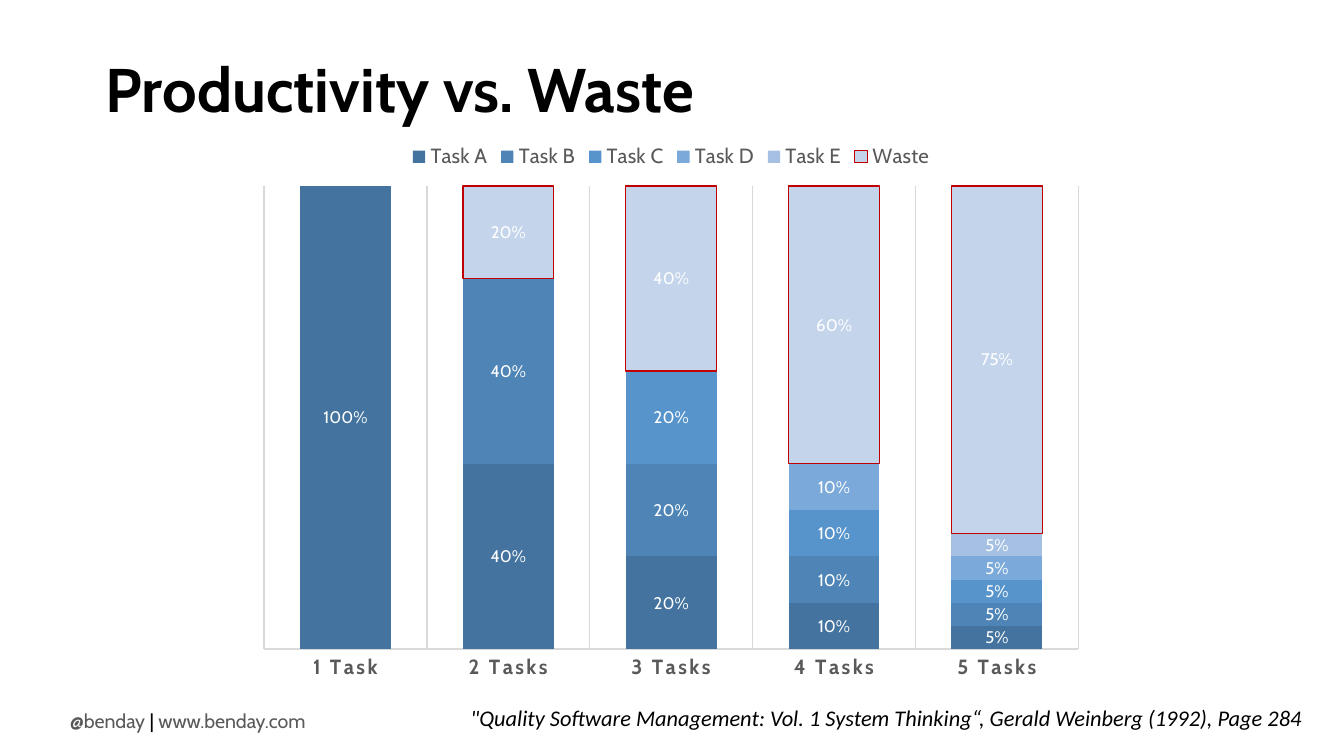
from pptx import Presentation
from pptx.chart.data import CategoryChartData as Data
from pptx.dml.color import RGBColor
from pptx.enum.chart import XL_CHART_TYPE as Kind, XL_LABEL_POSITION as Spot
from pptx.enum.chart import XL_LEGEND_POSITION as Side, XL_TICK_MARK as Tick
from pptx.enum.text import MSO_ANCHOR as Anchor, MSO_AUTO_SIZE as Fit
from pptx.util import Cm, Pt

GREY = "595959"
RULE = "D9D9D9"
TASKS = [
    ("Task A", "43739E", (1, 0.4, 0.2, 0.1, 0.05)),
    ("Task B", "4E85B6", (0, 0.4, 0.2, 0.1, 0.05)),
    ("Task C", "5794CB", (0, 0, 0.2, 0.1, 0.05)),
    ("Task D", "7AA9DA", (0, 0, 0, 0.1, 0.05)),
    ("Task E", "A5C0E3", (0, 0, 0, 0, 0.05)),
    ("Waste", "C4D5EB", (0, 0.2, 0.4, 0.6, 0.75)),
]


def tint(color, code):
    color.rgb = RGBColor.from_string(code)


def style(font, size, code, name="Cabin", bold=False, italic=False):
    font.size, font.name, font.bold, font.italic = Pt(size), name, bold, italic
    tint(font.color, code)


def stroke(line, code):
    tint(line.fill.fore_color if line.fill.solid() else line.color, code)
    line.width = Pt(0.75)


def add_text(slide, box, wrap=False):
    frame = slide.shapes.add_textbox(*map(Cm, box)).text_frame
    frame.word_wrap = wrap
    frame.auto_size = Fit.NONE if wrap else Fit.SHAPE_TO_FIT_TEXT
    return frame


def add_title(slide, box):
    frame = add_text(slide, box, True)
    frame.vertical_anchor = Anchor.MIDDLE
    para = frame.paragraphs[0]
    para.text = "Productivity vs. Waste"
    para.line_spacing = 0.9
    style(para.font, 33, "000000", bold=True)


def add_footer(slide, box):
    para = add_text(slide, box).paragraphs[0]
    parts = [("@benday", GREY), (" | ", "000000"), ("www.benday.com", GREY)]
    for text, code in parts:
        run = para.add_run()
        run.text = text
        style(run.font, 10.5, code)


def add_source(slide, box):
    para = add_text(slide, box).paragraphs[0]
    para.text = ('"Quality Software Management: Vol. 1 System Thinking“, '
                 "Gerald Weinberg (1992), Page 284")
    style(para.font, 12, "000000", "Calibri", italic=True)


def add_bars(slide, box):
    data = Data(number_format="0%")
    data.categories = ["1 Task"] + [f"{n} Tasks" for n in range(2, 6)]
    for name, code, vals in TASKS:
        data.add_series(name, vals)
    chart = slide.shapes.add_chart(
        Kind.COLUMN_STACKED_100, *map(Cm, box), data).chart
    style(chart.font, 10, "000000")
    chart.has_title = False

    chart.has_legend = True
    chart.legend.position = Side.TOP
    chart.legend.include_in_layout = False
    style(chart.legend.font, 11, GREY)

    cats = chart.category_axis
    cats.major_tick_mark = cats.minor_tick_mark = Tick.NONE
    cats.has_major_gridlines = True
    stroke(cats.format.line, RULE)
    stroke(cats.major_gridlines.format.line, RULE)
    font = cats.tick_labels.font
    style(font, 11, GREY, bold=True)
    cats._element.find(".//{*}defRPr").set("spc", "120")

    axis = chart.value_axis
    axis.has_major_gridlines = False
    axis.visible = False
    axis.tick_labels.number_format = "0%"
    axis.tick_labels.number_format_is_linked = False

    plot = chart.plots[0]
    plot.gap_width, plot.overlap = 79, 100
    plot.vary_by_categories = False
    for bar, (name, code, vals) in zip(plot.series, TASKS):
        bar.format.fill.solid()
        tint(bar.format.fill.fore_color, code)
        if name == "Waste":
            stroke(bar.format.line, "C00000")
        else:
            bar.format.line.fill.background()
        tags = bar.data_labels
        tags.show_value = True
        tags.position = Spot.CENTER
        tags.number_format = "0%;;"
        tags.number_format_is_linked = False
        style(tags.font, 9, "FFFFFF")


def main():
    deck = Presentation()
    deck.slide_width, deck.slide_height = Cm(25.4), Cm(14.29)
    slide = deck.slides.add_slide(deck.slide_layouts[6])
    add_footer(slide, (1.07, 13.28, 5.28, 0.71))
    add_title(slide, (1.75, 0.76, 21.9, 1.98))
    add_source(slide, (8.64, 13.18, 16.4, 0.76))
    add_bars(slide, (4.67, 2.44, 16.03, 10.62))
    deck.save("out.pptx")


if __name__ == "__main__":
    main()
